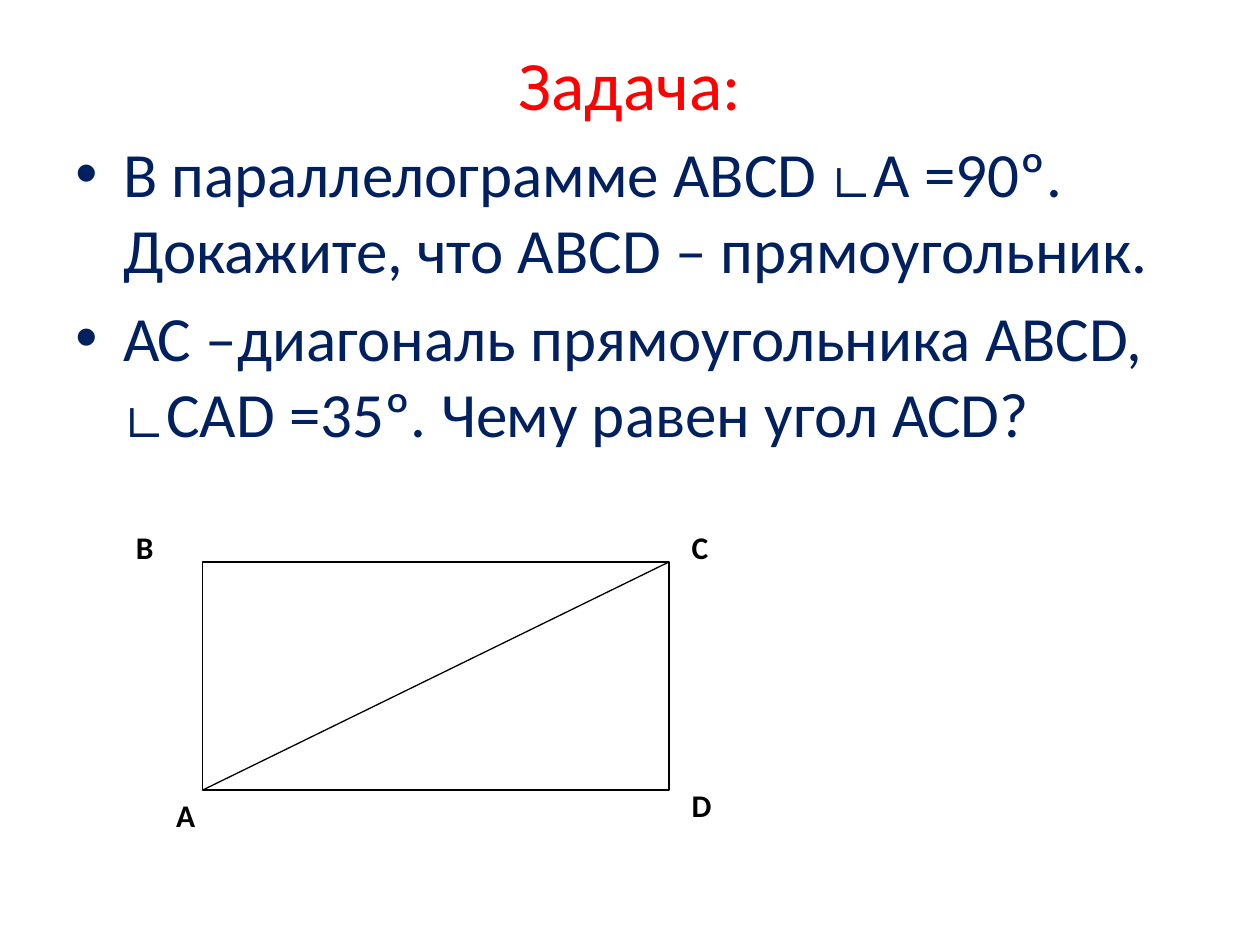
from typing import NamedTuple

from lxml import etree
from pptx import Presentation
from pptx import util as u
from pptx.dml.color import RGBColor
from pptx.enum import shapes, text
from pptx.oxml.ns import qn

RED = RGBColor(0xFF, 0x00, 0x00)
NAVY = RGBColor(0x00, 0x20, 0x60)
BLACK = RGBColor(0x00, 0x00, 0x00)
FONT = "Calibri"
COLUMNS, ROWS = 100, 75

prs = Presentation()
prs.slide_width, prs.slide_height = u.Inches(10), u.Inches(7.5)


class Box(NamedTuple):
    """Left, top, width and height in grid columns and rows."""
    left: float
    top: float
    width: float
    height: float


class Vertex(NamedTuple):
    letter: str
    left: float
    top: float


TITLE = Box(5, 3, 90, 7.2)
BODY = Box(5, 10.2, 90, 56.8)
RECTANGLE = Box(16.1, 44.6, 37, 18.1)
LABEL_WIDTH, LABEL_HEIGHT = 4.7, 4

TASKS = (
    "В параллелограмме ABCD ∟А =90º. Докажите, что ABCD – прямоугольник.",
    "АС –диагональ прямоугольника ABCD, ∟САD =35º. Чему равен угол АСD?",
)
VERTICES = (
    Vertex("А", 13, 62.7),
    Vertex("D", 53.9, 61.9),
    Vertex("С", 53.9, 41.4),
    Vertex("В", 9.8, 41.4),
)


def col(n: float) -> int:
    return round(prs.slide_width * n / COLUMNS)


def row(n: float) -> int:
    return round(prs.slide_height * n / ROWS)


def place(box: Box) -> tuple[int, int, int, int]:
    return col(box.left), row(box.top), col(box.width), row(box.height)


def add_run(p, words: str, size: float, color: RGBColor, bold: bool = False) -> None:
    r = p.add_run()
    r.text = words
    r.font.name, r.font.size, r.font.bold = FONT, u.Pt(size), bold
    r.font.color.rgb = color


def add_bullet(p, indent: int) -> None:
    pPr = p._p.get_or_add_pPr()
    pPr.set("marL", str(indent))
    pPr.set("indent", str(-indent))
    etree.SubElement(pPr, qn("a:buFont")).set("typeface", "Arial")
    etree.SubElement(pPr, qn("a:buChar")).set("char", "•")


def add_title(slide) -> None:
    sp = slide.shapes.title
    sp.left, sp.top, sp.width, sp.height = place(TITLE)
    tf = sp.text_frame
    tf.vertical_anchor = text.MSO_ANCHOR.MIDDLE
    p = tf.paragraphs[0]
    p.alignment = text.PP_ALIGN.CENTER
    add_run(p, "Задача:", 39.6, RED)


def add_tasks(slide) -> None:
    tf = slide.shapes.add_textbox(*place(BODY)).text_frame
    tf.word_wrap = True
    for i, task in enumerate(TASKS):
        p = tf.add_paragraph() if i else tf.paragraphs[0]
        p.space_before = u.Pt(7.2)
        add_bullet(p, u.Inches(0.38))
        add_run(p, task, 36, NAVY)


def add_label(group, vertex: Vertex) -> None:
    box = Box(vertex.left, vertex.top, LABEL_WIDTH, LABEL_HEIGHT)
    tf = group.shapes.add_textbox(*place(box)).text_frame
    tf.word_wrap = True
    tf.auto_size = text.MSO_AUTO_SIZE.SHAPE_TO_FIT_TEXT
    add_run(tf.paragraphs[0], vertex.letter, 18, BLACK, bold=True)


def set_outline(sp) -> None:
    sp.line.color.rgb = BLACK
    sp.line.width = u.Pt(0.75)


def add_figure(slide) -> None:
    """Rectangle ABCD with its diagonal AC."""
    group = slide.shapes.add_group_shape()
    left, top, width, height = place(RECTANGLE)
    sp = group.shapes.add_shape(
        shapes.MSO_SHAPE.RECTANGLE, left, top, width, height)
    sp.shadow.inherit = False
    sp.fill.background()
    set_outline(sp)

    for vertex in VERTICES:
        add_label(group, vertex)

    diagonal = group.shapes.add_connector(
        shapes.MSO_CONNECTOR.STRAIGHT, left, top + height, left + width, top)
    set_outline(diagonal)
    etree.SubElement(diagonal._element.spPr, qn("a:effectLst"))


def main() -> None:
    slide = prs.slides.add_slide(prs.slide_layouts.get_by_name("Title Only"))
    add_title(slide)
    add_tasks(slide)
    add_figure(slide)
    prs.save("out.pptx")


if __name__ == "__main__":
    main()
